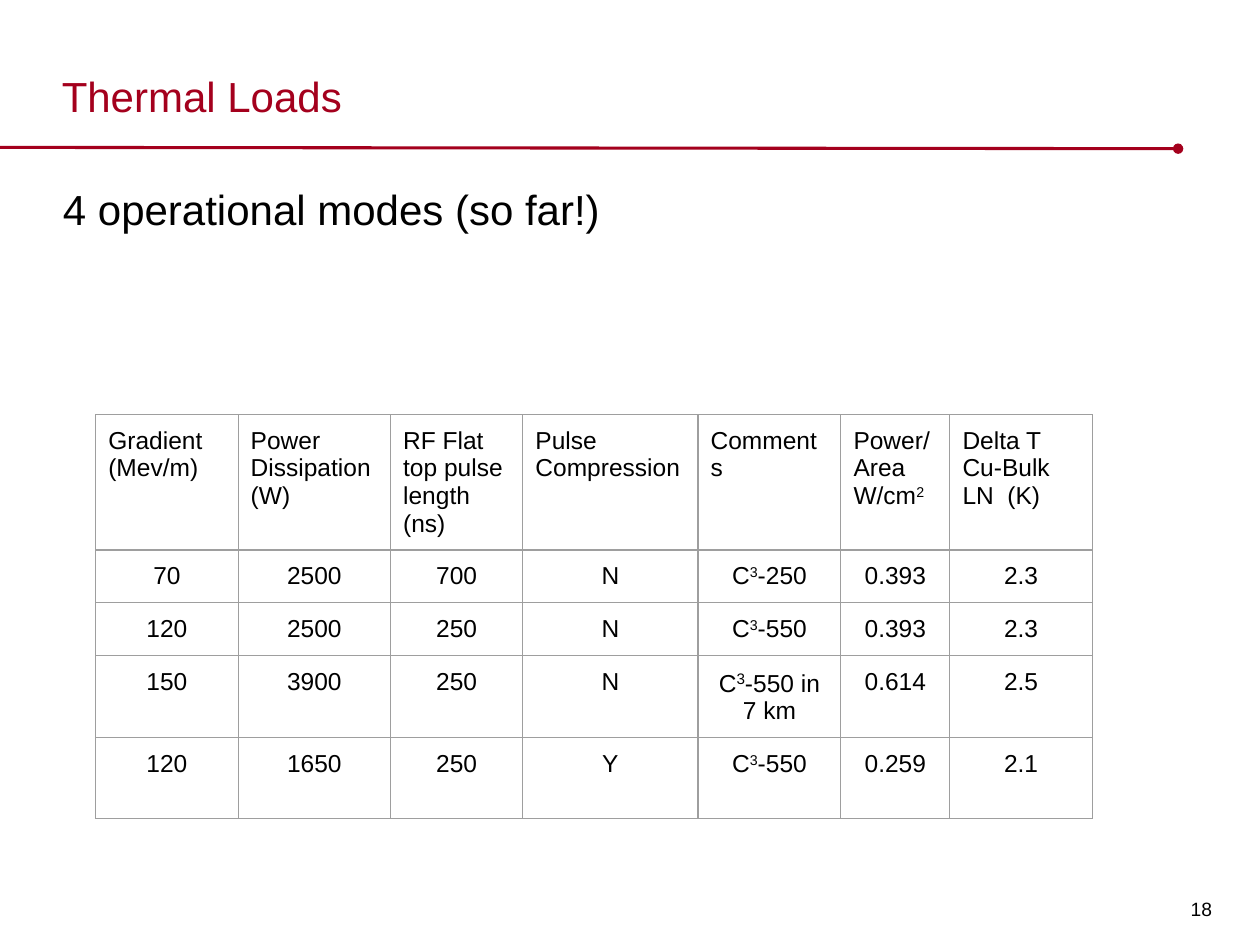
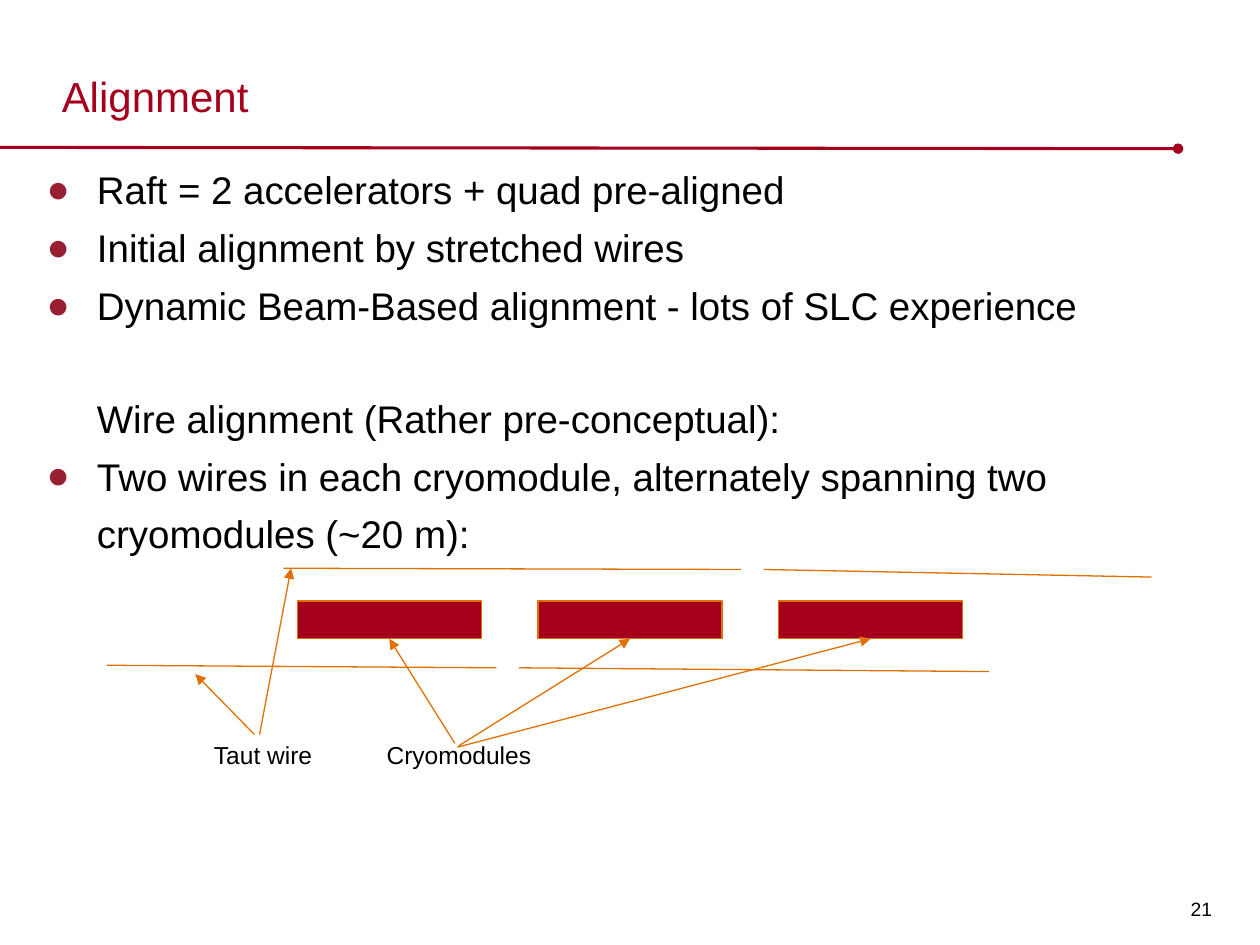
import dataclasses

import lxml.etree
import pptx
import pptx.dml.color
import pptx.enum.shapes
import pptx.enum.text
import pptx.oxml.ns
import pptx.util

GRID_COLUMNS = 100


@dataclasses.dataclass(frozen=True)
class Theme:
    """Colours, font, type sizes and line widths shared by the slides."""

    red: str = "A4001D"
    bullet: str = "981E32"
    orange: str = "E17000"
    grey: str = "9E9E9E"
    black: str = "000000"
    font: str = "Arial"
    title: float = 24
    body: float = 22
    label: float = 14
    number: float = 11
    rule: float = 1.75
    hairline: float = 0.75
    spacing: float = 1.25


THEME = Theme()


@dataclasses.dataclass(frozen=True)
class Box:
    """A region measured in grid columns and rows of the given unit."""

    unit: float
    left: float
    top: float
    width: float
    height: float

    def size(self, amount):
        """Turn a number of grid steps into a length."""
        return pptx.util.Emu(round(amount * self.unit))

    def point(self, column, row):
        """Locate a point counted from the region's corner."""
        return self.size(self.left + column), self.size(self.top + row)

    def region(self, column, row, width, height):
        """Return a region placed relative to this one."""
        return Box(self.unit, self.left + column, self.top + row, width, height)

    def frame(self):
        """Return left, top, width and height as lengths."""
        return *self.point(0, 0), self.size(self.width), self.size(self.height)


def colour(value):
    """Make a colour from its hexadecimal digits."""
    return pptx.dml.color.RGBColor.from_string(value)


def add_xml(parent, tag, **attributes):
    """Append a drawing element to a parent element."""
    return lxml.etree.SubElement(parent, pptx.oxml.ns.qn(tag), **attributes)


def style_paragraph(paragraph, size, ink=THEME.black):
    """Set the font of a whole paragraph."""
    paragraph.font.name = THEME.font
    paragraph.font.size = pptx.util.Pt(size)
    paragraph.font.color.rgb = colour(ink)


def set_frame(text_frame, margins, anchor=pptx.enum.text.MSO_ANCHOR.TOP):
    """Set wrapping, anchor and inner margins, in inches, of a text frame."""
    text_frame.word_wrap = True
    text_frame.auto_size = pptx.enum.text.MSO_AUTO_SIZE.NONE
    text_frame.vertical_anchor = anchor
    (text_frame.margin_left, text_frame.margin_top,
     text_frame.margin_right, text_frame.margin_bottom) = map(pptx.util.Inches, margins)


def add_text(slide, box, text, size, margins, anchor=pptx.enum.text.MSO_ANCHOR.TOP):
    """Add a text box with one paragraph and return that paragraph."""
    text_frame = slide.shapes.add_textbox(*box.frame()).text_frame
    set_frame(text_frame, margins, anchor)
    paragraph = text_frame.paragraphs[0]
    paragraph.text = text
    style_paragraph(paragraph, size)
    return paragraph


def add_line(slide, box, start, end, ink=THEME.orange, width=THEME.hairline, tail=None):
    """Draw a straight line between two points of a region."""
    line = slide.shapes.add_connector(
        pptx.enum.shapes.MSO_CONNECTOR.STRAIGHT, *box.point(*start), *box.point(*end))
    line.line.color.rgb = colour(ink)
    line.line.width = pptx.util.Pt(width)
    if tail:
        add_xml(line.line._get_or_add_ln(), "a:tailEnd", type=tail)
    add_xml(line._element.spPr, "a:effectLst")
    return line


def add_base_slide(presentation, page, title, number):
    """Add a slide with its title, rule and slide number."""
    slide = presentation.slides.add_slide(presentation.slide_layouts[5])
    heading = slide.shapes.title
    heading.left, heading.top, heading.width, heading.height = page.region(4.9, 1.4, 88.6, 8.2).frame()
    set_frame(heading.text_frame, (0, 0, 0, 0), pptx.enum.text.MSO_ANCHOR.BOTTOM)
    paragraph = heading.text_frame.paragraphs[0]
    paragraph.text = title
    paragraph.alignment = pptx.enum.text.PP_ALIGN.LEFT
    style_paragraph(paragraph, THEME.title, THEME.red)
    add_line(slide, page, (0, 11.7), (93.5, 11.8), THEME.red, THEME.rule, "oval")
    add_text(slide, page.region(93.7, 69.1, 3.5, 5.9), number, THEME.number,
             (0.08, 0.06, 0.08, 0.05), pptx.enum.text.MSO_ANCHOR.MIDDLE)
    return slide


def fill_cell(cell, lines, alignment):
    """Write lines into a bordered cell; text between carets is raised."""
    cell.fill.background()
    cell.margin_left = cell.margin_right = pptx.util.Inches(0.1)
    cell.margin_top = cell.margin_bottom = pptx.util.Inches(0.1)
    for index, line in enumerate(lines.split("\n")):
        text_frame = cell.text_frame
        paragraph = text_frame.add_paragraph() if index else text_frame.paragraphs[0]
        paragraph.alignment = alignment
        style_paragraph(paragraph, THEME.label)
        for position, piece in enumerate(line.split("^")):
            if piece:
                run = paragraph.add_run()
                run.text = piece
                if position % 2:
                    run._r.get_or_add_rPr().set("baseline", "30000")
    properties = cell._tc.get_or_add_tcPr()
    for index, side in enumerate("LRTB"):
        border = add_xml(properties, f"a:ln{side}", w=str(pptx.util.Pt(THEME.hairline)))
        add_xml(add_xml(border, "a:solidFill"), "a:srgbClr", val=THEME.grey)
        properties.insert(index, border)


def add_load_table(slide, box, rows, widths, heights):
    """Add the table of operational modes."""
    table = slide.shapes.add_table(len(rows), len(widths), *box.frame()).table
    table.first_row = table.horz_banding = False
    for column, width in zip(table.columns, widths):
        column.width = box.size(width)
    align = pptx.enum.text.PP_ALIGN
    for index, (row, height, texts) in enumerate(zip(table.rows, heights, rows)):
        row.height = box.size(height)
        for cell, text in zip(row.cells, texts):
            fill_cell(cell, text, align.CENTER if index else align.LEFT)
    return table


def add_thermal_slide(presentation, page):
    """Build the slide on thermal loads."""
    slide = add_base_slide(presentation, page, "Thermal Loads", "18")
    paragraph = add_text(slide, page.region(5, 13.6, 88.7, 10), "4 operational modes (so far!)",
                         THEME.title, (0, 0, 0, 0))
    paragraph.line_spacing = THEME.spacing
    rows = [
        ("Gradient (Mev/m)", "Power Dissipation (W)", "RF Flat top pulse length (ns)",
         "Pulse Compression", "Comments", "Power/Area\nW/cm^2^", "Delta T\nCu-Bulk LN  (K)"),
        ("70", "2500", "700", "N", "C^3^-250", "0.393", "2.3"),
        ("120", "2500", "250", "N", "C^3^-550", "0.393", "2.3"),
        ("150", "3900", "250", "N", "C^3^-550 in 7 km", "0.614", "2.5"),
        ("120", "1650", "250", "Y", "C^3^-550", "0.259", "2.1"),
    ]
    widths = (11.3, 12.1, 10.5, 13.9, 11.35, 8.65, 11.3)
    heights = (10.7, 4.2, 4.2, 6.5, 6.4)
    box = page.region(7.6, 32.9, sum(widths), sum(heights))
    table = add_load_table(slide, box, rows, widths, heights)
    table.cell(3, 4).text_frame.paragraphs[0].runs[1].font.size = pptx.util.Pt(THEME.label + 1)


def add_bullets(slide, box, items):
    """Add the body list; an item without a bullet opens a new group."""
    text_frame = slide.shapes.add_textbox(*box.frame()).text_frame
    set_frame(text_frame, (0, 0, 0, 0))
    for index, (text, has_bullet) in enumerate(items):
        paragraph = text_frame.add_paragraph() if index else text_frame.paragraphs[0]
        paragraph.text = text
        properties = paragraph._p.get_or_add_pPr()
        properties.set("marL", str(pptx.util.Inches(0.5)))
        properties.set("indent", str(pptx.util.Inches(-0.4 if has_bullet else 0)))
        if has_bullet:
            add_xml(add_xml(properties, "a:buClr"), "a:srgbClr", val=THEME.bullet)
            add_xml(properties, "a:buFont", typeface=THEME.font)
            add_xml(properties, "a:buChar", char="●")
        else:
            add_xml(properties, "a:buNone")
            paragraph.space_before = pptx.util.Pt(31.6)
        paragraph.line_spacing = THEME.spacing
        style_paragraph(paragraph, THEME.body)


def add_wire_diagram(slide, box):
    """Draw cryomodules, taut wires and their labelled arrows."""
    cryomodules = []
    for index in range(3):
        cryomodule = slide.shapes.add_shape(
            pptx.enum.shapes.MSO_SHAPE.RECTANGLE,
            *box.region(15.1 + 19.1 * index, 2.6, 14.6, 3).frame())
        cryomodule.shadow.inherit = False
        cryomodule.fill.solid()
        cryomodule.fill.fore_color.rgb = colour(THEME.red)
        cryomodule.line.color.rgb = colour(THEME.orange)
        cryomodule.line.width = pptx.util.Pt(THEME.hairline)
        cryomodules.append(cryomodule)
    wires = [((14, 0), (50.3, 0.1)), ((52.1, 0.1), (82.9, 0.7)),
             ((0, 7.7), (30.9, 7.9)), ((32.7, 7.9), (70, 8.2))]
    for start, end in wires:
        add_line(slide, box, start, end)
    for text, column in (("Taut wire", 7.5), ("Cryomodules", 21.2)):
        add_text(slide, box.region(column, 12.6, 13.6, 4.4), text, THEME.label, (0.1,) * 4)
    for start, end in (((11.7, 13.2), (7, 8.4)), ((12.1, 13.2), (14.6, 0))):
        add_line(slide, box, start, end, tail="triangle")
    starts = ((27.6, 13.9), (27.9, 14.1), (27.8, 14.2))
    for start, cryomodule in zip(starts, cryomodules):
        arrow = add_line(slide, box, start, start, tail="triangle")
        arrow.end_connect(cryomodule, 2)


def add_alignment_slide(presentation, page):
    """Build the slide on alignment."""
    slide = add_base_slide(presentation, page, "Alignment", "21")
    add_bullets(slide, page.region(2.7, 12.3, 88.7, 32), [
        ("Raft = 2 accelerators + quad pre-aligned", True),
        ("Initial alignment by stretched wires", True),
        ("Dynamic Beam-Based alignment - lots of SLC experience", True),
        ("Wire alignment (Rather pre-conceptual):", False),
        ("Two wires in each cryomodule, alternately spanning two cryomodules (~20 m):", True),
    ])
    add_wire_diagram(slide, page.region(8.5, 45.1, 82.9, 17))


def main():
    """Build and save the presentation."""
    presentation = pptx.Presentation()
    presentation.slide_width = pptx.util.Inches(10)
    presentation.slide_height = pptx.util.Inches(7.5)
    unit = presentation.slide_width / GRID_COLUMNS
    page = Box(unit, 0, 0, GRID_COLUMNS, presentation.slide_height / unit)
    add_thermal_slide(presentation, page)
    add_alignment_slide(presentation, page)
    presentation.save("out.pptx")


if __name__ == "__main__":
    main()
